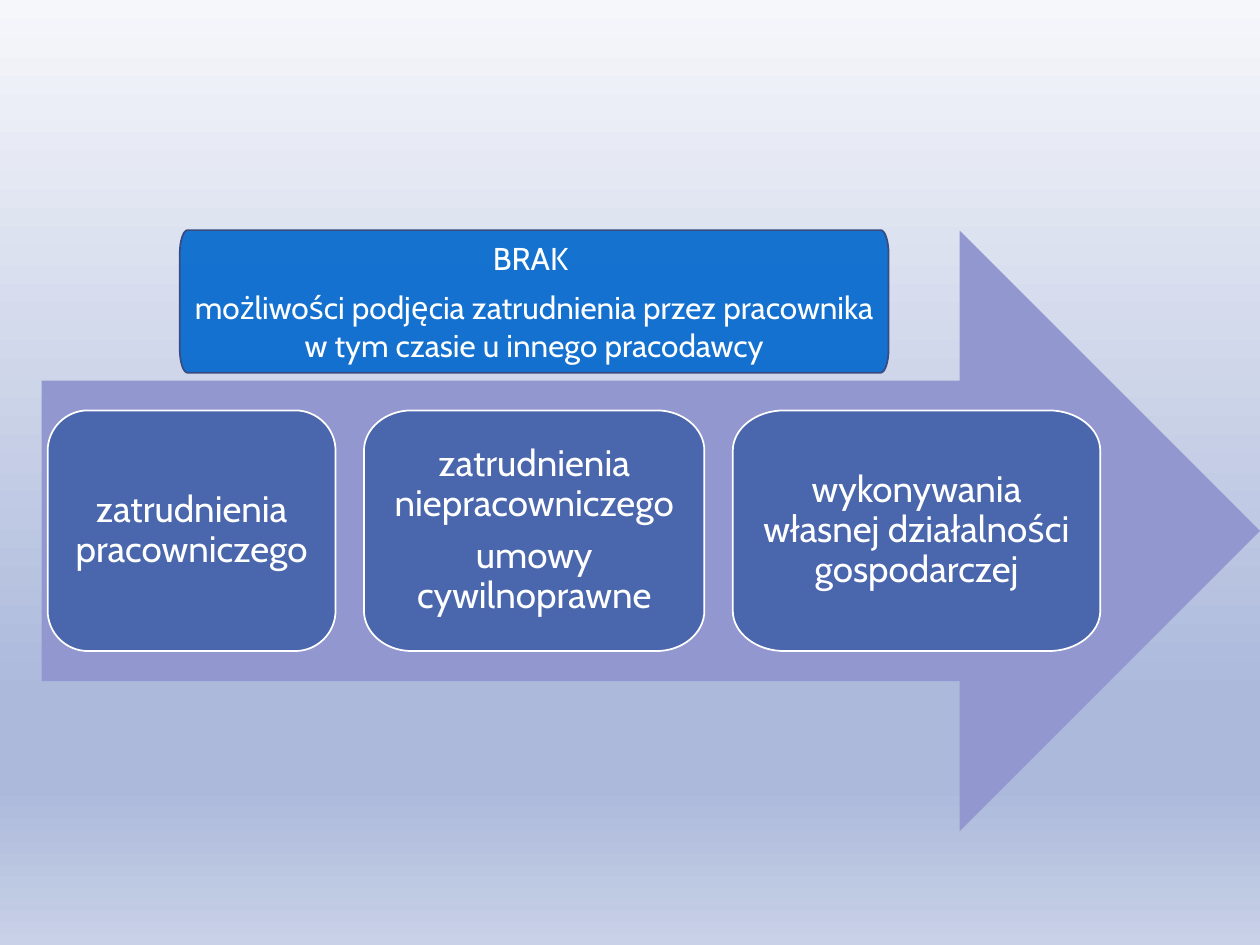
from lxml.etree import SubElement
from pptx import Presentation
from pptx.dml.color import RGBColor
from pptx.enum.shapes import MSO_SHAPE
from pptx.enum.text import MSO_ANCHOR, PP_ALIGN
from pptx.oxml.ns import qn
from pptx.util import Pt


def color(code):
    return RGBColor.from_string(code)


def write(shape, lines, size=21, inset=14.5, spacing=None, ink="FFFFFF", font="Cabin"):
    frame = shape.text_frame
    frame.word_wrap = True
    frame.vertical_anchor = MSO_ANCHOR.MIDDLE
    frame.margin_left = frame.margin_right = Pt(inset)
    frame.margin_top = frame.margin_bottom = Pt(inset)
    for i, line in enumerate(lines):
        para = frame.paragraphs[0] if i == 0 else frame.add_paragraph()
        para.alignment = PP_ALIGN.CENTER
        para.line_spacing = spacing
        para.space_after = Pt(0.35 * size)
        run = para.add_run()
        run.text = line
        run.font.name = font
        run.font.size = Pt(size)
        run.font.color.rgb = color(ink)


def oval_path(x, y, w, h, rx, ry):
    """Four points per corner: where it starts, two curve handles, where it ends."""
    right, low = x + w, y + h
    corners = [((x, y), (0, ry), (rx, 0)), ((right, y), (-rx, 0), (0, ry)),
               ((right, low), (0, -ry), (-rx, 0)), ((x, low), (rx, 0), (0, -ry))]
    points = []
    for (cx, cy), enter, leave in corners:
        for (dx, dy), part in ((enter, 1), (enter, 0.45), (leave, 0.45), (leave, 1)):
            points.append((Pt(cx + part * dx), Pt(cy + part * dy)))
    return points


def curve(shape):
    """Turn the three segments of each corner into one Bezier curve."""
    path = next(shape.element.iter(qn("a:path")))
    lines = path.findall(qn("a:lnTo"))
    for i in range(0, 16, 4):
        bend = path.makeelement(qn("a:cubicBezTo"))
        lines[i].addprevious(bend)
        for line in lines[i:i + 3]:
            bend.append(line[0])
            path.remove(line)


class Deck:
    back = [(0, "F6F7FB"), (74, "ACB9DB"), (83, "ACB9DB"), (100, "C8D1E7")]

    def __init__(self):
        self.show = Presentation()
        self.show.slide_width, self.show.slide_height = Pt(720), Pt(540)
        self.slide = self.show.slides.add_slide(self.show.slide_layouts[6])

    def shade(self):
        """Fill the background with the vertical gradient."""
        fill = self.slide.background.fill
        fill.gradient()
        fill.gradient_angle = 270
        stops = next(self.slide.element.iter(qn("a:gsLst")))
        for stop in list(stops):
            stops.remove(stop)
        for place, code in self.back:
            stop = SubElement(stops, qn("a:gs"), pos=str(place * 1000))
            SubElement(stop, qn("a:srgbClr"), val=code)

    def paint(self, shape, fill, line=None, alpha=None):
        shape.shadow.inherit = False
        shape.fill.solid()
        shape.fill.fore_color.rgb = color(fill)
        if alpha:
            tint = next(shape.element.spPr.iter(qn("a:srgbClr")))
            SubElement(tint, qn("a:alpha"), val=str(alpha * 1000))
        if line:
            shape.line.color.rgb = color(line)
            shape.line.width = Pt(1)
        else:
            shape.line.fill.background()

    def arrow(self, x, y, w, h, fill):
        shape = self.slide.shapes.add_shape(
            MSO_SHAPE.RIGHT_ARROW, Pt(x), Pt(y), Pt(w), Pt(h))
        self.paint(shape, fill)

    def box(self, x, y, w, h, rx, ry, fill, line, alpha=None):
        first, *rest = oval_path(x, y, w, h, rx, ry)
        path = self.slide.shapes.build_freeform(*first)
        path.add_line_segments(rest + [first], close=True)
        shape = path.convert_to_shape()
        curve(shape)
        self.paint(shape, fill, line, alpha)
        return shape


def main():
    deck = Deck()
    deck.shade()
    deck.arrow(23.75, 131.75, 696.25, 343.25, "9297CF")

    forms = [
        (164.5, ["zatrudnienia pracowniczego"]),
        (194.5, ["zatrudnienia niepracowniczego", "umowy cywilnoprawne"]),
        (210, ["wykonywania własnej działalności gospodarczej"]),
    ]
    left, gap = 27.25, 16.25
    for width, lines in forms:
        form = deck.box(left, 234.5, width, 137.5, 0.14 * width, 23, "4A66AC", "FFFFFF")
        write(form, lines, spacing=0.9)
        left += width + gap

    ban = deck.box(102.75, 131.5, 405, 81.5, 4.5, 13.5, "0066CC", "384C81", alpha=90)
    write(ban, ["BRAK ", "możliwości podjęcia zatrudnienia przez pracownika "
                "w tym czasie u innego pracodawcy"], size=18, inset=7.2)

    deck.show.save("out.pptx")


if __name__ == "__main__":
    main()
